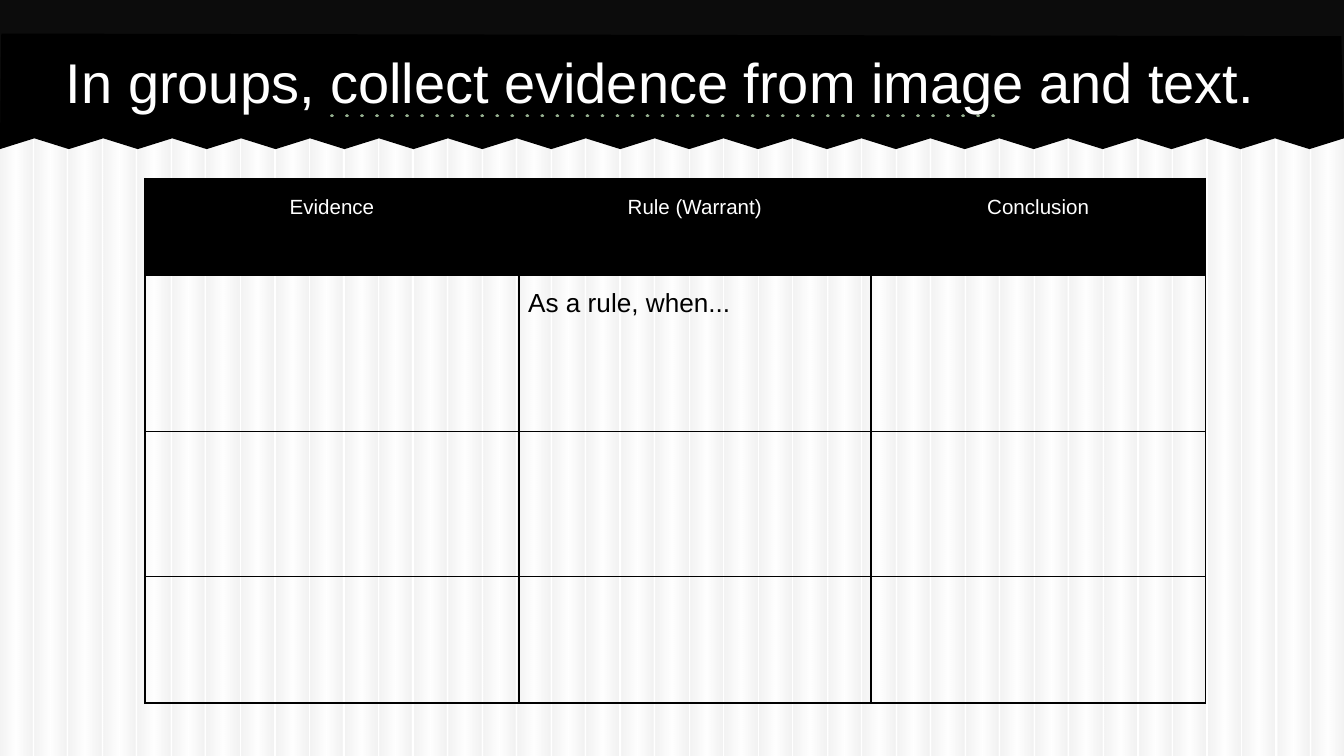
from lxml import etree
from pptx import Presentation
from pptx.dml.color import RGBColor
from pptx.enum.shapes import MSO_CONNECTOR, MSO_SHAPE
from pptx.enum.text import MSO_ANCHOR, PP_ALIGN
from pptx.oxml.ns import qn
from pptx.util import Inches, Pt

RECT = MSO_SHAPE.RECTANGLE
STRAIGHT = MSO_CONNECTOR.STRAIGHT
TOP = MSO_ANCHOR.TOP
LEFT, CENTER = PP_ALIGN.LEFT, PP_ALIGN.CENTER
BLACK = RGBColor(0x00, 0x00, 0x00)
WHITE = RGBColor(0xFF, 0xFF, 0xFF)
CHARCOAL = RGBColor(0x0C, 0x0C, 0x0C)
SAGE = RGBColor(0x94, 0xAE, 0x8E)
SILVER = RGBColor(0xBF, 0xBF, 0xBF)

TITLE = "In groups, collect evidence from image and text."
ROWS = [
    ["Evidence", "Rule (Warrant)", "Conclusion"],
    ["", "As a rule, when...", ""],
    ["", "", ""],
    ["", "", ""],
]
COL_WIDTHS = [2.78, 2.62, 2.49]
ROW_HEIGHTS = [0.72, 1.16, 1.08, 0.94]
HEADER_FONT = {"name": "Arial", "size": Pt(11), "bold": False}
BODY_FONT = {"name": "Arial", "size": Pt(14), "bold": False}
TITLE_FONT = {"name": "Arial", "size": Pt(30), "bold": False}
CELL_FORMAT = {"margin_left": Inches(0.07), "margin_right": Inches(0.07),
               "margin_top": Inches(0.1), "margin_bottom": Inches(0.1),
               "vertical_anchor": TOP}
TITLE_FORMAT = {"margin_left": Inches(0.1), "margin_right": Inches(0.1),
                "margin_top": Inches(0.1), "margin_bottom": Inches(0.1),
                "vertical_anchor": TOP, "word_wrap": True}
STRIPE_STOPS = [(0, SILVER), (50, WHITE), (97, SILVER), (100, SILVER)]
STRIPE_COUNT = 39
WIDTH = 10
HEIGHT = WIDTH * 9 / 16
STRIPE_PITCH = 9.76 / (STRIPE_COUNT - 1)
TOOTH_PITCH = WIDTH / STRIPE_COUNT


def set_all(obj, values):
    for name, value in values.items():
        setattr(obj, name, value)


def style_text(p, font, color, align):
    p.alignment = align
    set_all(p.font, font)
    p.font.color.rgb = color


def plain(sp, color):
    sp.shadow.inherit = False
    sp.line.fill.background()
    sp.fill.solid()
    sp.fill.fore_color.rgb = color


def add_stripe(s, left):
    sp = s.shapes.add_shape(RECT, Inches(left), Inches(0.01), Inches(0.24), Inches(HEIGHT))
    plain(sp, SILVER)
    sp.fill.gradient()
    sp.fill.gradient_angle = 0
    stops = sp._element.spPr.find(".//" + qn("a:gsLst"))
    stops.clear()
    for pos, color in STRIPE_STOPS:
        gs = etree.SubElement(stops, qn("a:gs"), pos=str(pos * 1000))
        clr = etree.SubElement(gs, qn("a:srgbClr"), val=str(color))
        etree.SubElement(clr, qn("a:alpha"), val="19000")


def add_banner(s):
    plain(s.shapes.add_shape(RECT, 0, 0, Inches(WIDTH), Inches(1.02)), CHARCOAL)
    teeth = [(i * TOOTH_PITCH, 1.03 if i % 2 else 1.11) for i in range(STRIPE_COUNT, -1, -1)]
    points = [(Inches(x), Inches(y)) for x, y in [(9.98, 0.27)] + teeth]
    fb = s.shapes.build_freeform(Inches(0.01), Inches(0.25))
    fb.add_line_segments(points, close=True)
    plain(fb.convert_to_shape(), BLACK)


def add_dotted_line(s):
    line = s.shapes.add_connector(STRAIGHT, Inches(2.47), Inches(0.86), Inches(7.5), Inches(0.86))
    line.line.color.rgb = SAGE
    line.line.width = Pt(2)
    pr = line._element.spPr
    ln = pr.find(qn("a:ln"))
    ln.set("cap", "rnd")
    etree.SubElement(ln, qn("a:prstDash"), val="dot")
    etree.SubElement(pr, qn("a:effectLst"))


def add_borders(cell):
    pr = cell._tc.get_or_add_tcPr()
    for i, side in enumerate(("lnL", "lnR", "lnT", "lnB")):
        ln = etree.Element(qn("a:" + side), w=str(Pt(1)))
        fill = etree.SubElement(ln, qn("a:solidFill"))
        etree.SubElement(fill, qn("a:srgbClr"), val=str(BLACK))
        pr.insert(i, ln)


def add_evidence_table(s):
    table = s.shapes.add_table(len(ROWS), len(COL_WIDTHS), Inches(1.08), Inches(1.33),
                               Inches(sum(COL_WIDTHS)), Inches(sum(ROW_HEIGHTS))).table
    table.horz_banding = False
    for col, width in zip(table.columns, COL_WIDTHS):
        col.width = Inches(width)
    for r, (row, height) in enumerate(zip(ROWS, ROW_HEIGHTS)):
        table.rows[r].height = Inches(height)
        for c, text in enumerate(row):
            cell = table.cell(r, c)
            cell.text = text
            set_all(cell, CELL_FORMAT)
            p = cell.text_frame.paragraphs[0]
            if r == 0:
                cell.fill.solid()
                cell.fill.fore_color.rgb = BLACK
                style_text(p, HEADER_FONT, WHITE, CENTER)
                p.line_spacing = 1.15
            else:
                cell.fill.background()
                style_text(p, BODY_FONT, BLACK, LEFT)
            add_borders(cell)


def add_title(s):
    title = s.shapes.title
    set_all(title, {"left": Inches(0.39), "top": Inches(0.25),
                    "width": Inches(9.39), "height": Inches(0.61)})
    tf = title.text_frame
    tf.text = TITLE
    set_all(tf, TITLE_FORMAT)
    style_text(tf.paragraphs[0], TITLE_FONT, WHITE, LEFT)
    s.shapes._spTree.append(title._element)


def main():
    prs = Presentation()
    prs.slide_width, prs.slide_height = Inches(WIDTH), Inches(HEIGHT)
    s = prs.slides.add_slide(prs.slide_layouts[5])
    s.background.fill.solid()
    s.background.fill.fore_color.rgb = WHITE
    for i in range(STRIPE_COUNT):
        add_stripe(s, i * STRIPE_PITCH)
    add_banner(s)
    add_dotted_line(s)
    add_evidence_table(s)
    add_title(s)
    prs.save("out.pptx")


if __name__ == "__main__":
    main()
